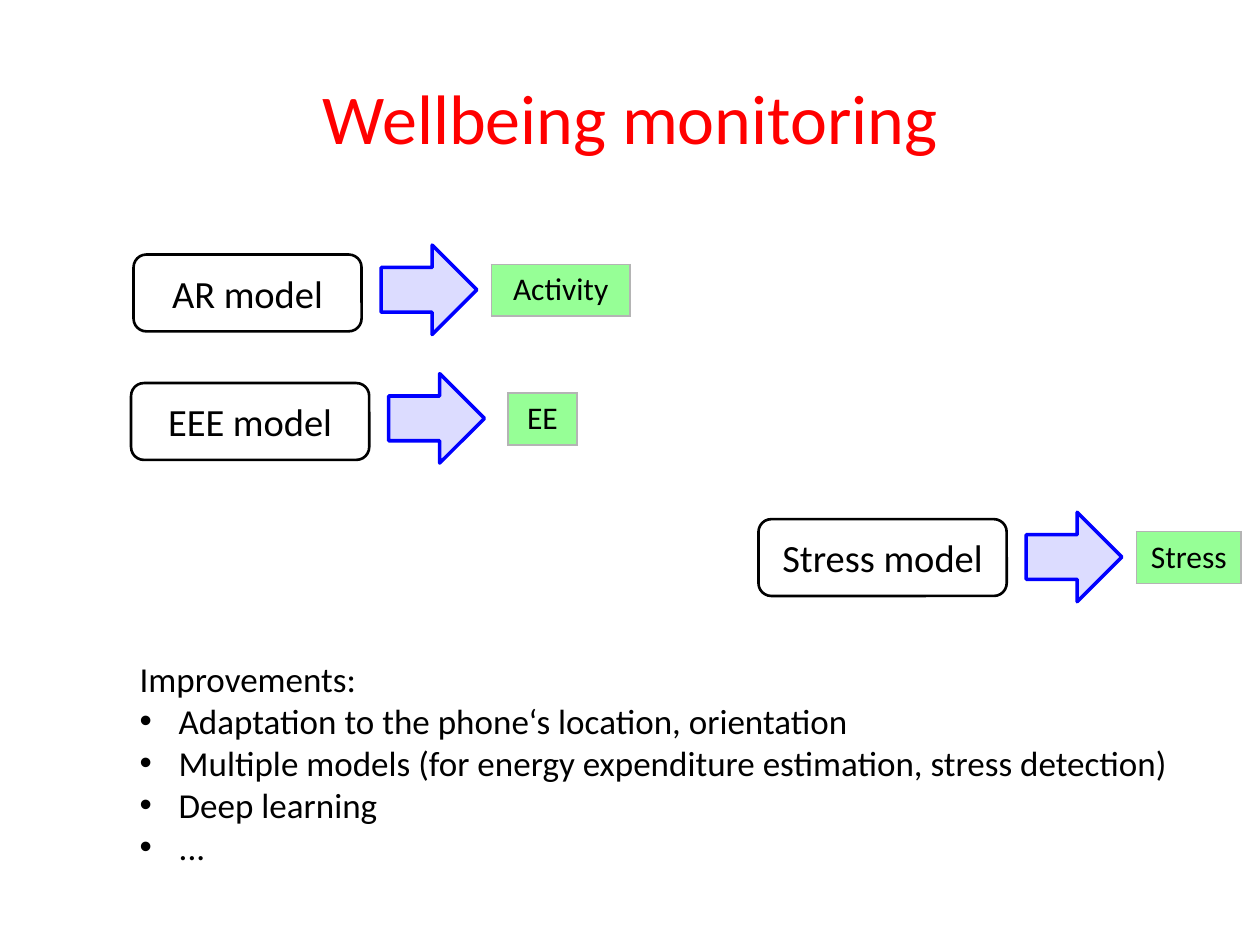
"""Build the wellbeing monitoring slide: three models, their outputs and a list of improvements."""
from dataclasses import dataclass

import pptx
import pptx.dml.color
import pptx.enum.shapes
import pptx.enum.text
import pptx.oxml
import pptx.oxml.ns
import pptx.util

TITLE = "Wellbeing monitoring"
MODELS = [
    {"model": "AR model", "output": "Activity", "left": 1.06, "top": 2.02, "width": 1.81,
     "output_gap": 0.14, "output_width": 1.1, "drop": 0, "grouped": False},
    {"model": "EEE model", "output": "EE", "left": 1.04, "top": 3.04, "width": 1.89,
     "output_gap": 0.21, "output_width": 0.55, "drop": 0, "grouped": False},
    {"model": "Stress model", "output": "Stress", "left": 6.02, "top": 4.12, "width": 1.97,
     "output_gap": 0.14, "output_width": 0.83, "drop": 0.02, "grouped": True},
]
IMPROVEMENTS_HEADING = "Improvements:"
IMPROVEMENTS = [
    "Adaptation to the phone‘s location, orientation",
    "Multiple models (for energy expenditure estimation, stress detection)",
    "Deep learning",
    "...",
]

COLUMNS, ROWS = 10, 7.5
BOX_HEIGHT = 0.61
ARROW_GAP, ARROW_RISE, ARROW_WIDTH, ARROW_HEIGHT = 0.18, 0.1, 0.71, 0.76
OUTPUT_OFFSET, OUTPUT_HEIGHT = 0.08, 0.41
BULLET_INDENT = 0.31


@dataclass(frozen=True)
class Theme:
    font: str = "Calibri"
    title: str = "FF0000"
    text: str = "000000"
    arrow_fill: str = "DCDCFF"
    arrow_line: str = "0000FF"
    output_fill: str = "96FF96"
    output_border: str = "B4B4B4"
    title_size: int = 40
    model_size: int = 22
    list_size: int = 20
    output_size: int = 18


THEME = Theme()
CENTER = pptx.enum.text.PP_ALIGN.CENTER
MIDDLE = pptx.enum.text.MSO_ANCHOR.MIDDLE
SHAPES = pptx.enum.shapes.MSO_SHAPE


def rgb(value):
    return pptx.dml.color.RGBColor.from_string(value)


def place(*cells):
    return [pptx.util.Inches(cell) for cell in cells]


def write(paragraph, text, size, color=THEME.text, alignment=None):
    paragraph.alignment = alignment
    run = paragraph.add_run()
    run.text = text
    run.font.name = THEME.font
    run.font.size = pptx.util.Pt(size)
    run.font.color.rgb = rgb(color)


def add_outlined(shapes, kind, frame, line, line_width, fill=None):
    shape = shapes.add_shape(kind, *place(*frame))
    shape.shadow.inherit = False
    if fill:
        shape.fill.solid()
        shape.fill.fore_color.rgb = rgb(fill)
    else:
        shape.fill.background()
    shape.line.color.rgb = rgb(line)
    shape.line.width = pptx.util.Pt(line_width)
    return shape


def add_output(slide, text, frame):
    table = slide.shapes.add_table(1, 1, *place(*frame)).table
    table.first_row = table.horz_banding = False
    cell = table.cell(0, 0)
    write(cell.text_frame.paragraphs[0], text, THEME.output_size, alignment=CENTER)
    properties = cell._tc.get_or_add_tcPr()
    for side in ("lnL", "lnR", "lnT", "lnB"):
        properties.append(pptx.oxml.parse_xml(
            f'<a:{side} {pptx.oxml.ns.nsdecls("a")} w="12700"><a:solidFill>'
            f'<a:srgbClr val="{THEME.output_border}"/></a:solidFill></a:{side}>'))
    cell.fill.solid()
    cell.fill.fore_color.rgb = rgb(THEME.output_fill)


def add_model(slide, entry):
    left, top, width, drop = (entry[key] for key in ("left", "top", "width", "drop"))
    arrow_left = left + width + ARROW_GAP
    output_left = arrow_left + ARROW_WIDTH + entry["output_gap"]
    add_output(slide, entry["output"],
               (output_left, top + OUTPUT_OFFSET + drop, entry["output_width"], OUTPUT_HEIGHT))

    shapes = slide.shapes.add_group_shape().shapes if entry["grouped"] else slide.shapes
    box = add_outlined(shapes, SHAPES.ROUNDED_RECTANGLE, (left, top, width, BOX_HEIGHT),
                       THEME.text, 1.5)
    box.text_frame.vertical_anchor = MIDDLE
    write(box.text_frame.paragraphs[0], entry["model"], THEME.model_size, alignment=CENTER)
    arrow = add_outlined(shapes, SHAPES.DOWN_ARROW,
                         (arrow_left, top - ARROW_RISE + drop, ARROW_WIDTH, ARROW_HEIGHT),
                         THEME.arrow_line, 2, THEME.arrow_fill)
    arrow.rotation = 270


def add_title(slide):
    title = slide.shapes.title
    title.left, title.top, title.width, title.height = place(0.5, 0.3, COLUMNS - 1, 1.25)
    title.text_frame.vertical_anchor = MIDDLE
    write(title.text_frame.paragraphs[0], TITLE, THEME.title_size, THEME.title, CENTER)


def add_improvements(slide):
    frame = slide.shapes.add_textbox(*place(1.01, 5.17, 8.45, 1.78)).text_frame
    frame.word_wrap = False
    frame.auto_size = pptx.enum.text.MSO_AUTO_SIZE.SHAPE_TO_FIT_TEXT
    write(frame.paragraphs[0], IMPROVEMENTS_HEADING, THEME.list_size)
    indent = pptx.util.Inches(BULLET_INDENT)
    for text in IMPROVEMENTS:
        paragraph = frame.add_paragraph()
        write(paragraph, text, THEME.list_size)
        properties = paragraph._p.get_or_add_pPr()
        properties.set("marL", str(indent))
        properties.set("indent", str(-indent))
        for bullet in ('buFont typeface="Arial"', 'buChar char="•"'):
            name, attribute = bullet.split()
            properties.append(pptx.oxml.parse_xml(
                f'<a:{name} {pptx.oxml.ns.nsdecls("a")} {attribute}/>'))


def main():
    presentation = pptx.Presentation()
    presentation.slide_width, presentation.slide_height = place(COLUMNS, ROWS)
    slide = presentation.slides.add_slide(presentation.slide_layouts.get_by_name("Title Only"))
    add_title(slide)
    for entry in MODELS:
        add_model(slide, entry)
    add_improvements(slide)
    presentation.save("out.pptx")


if __name__ == "__main__":
    main()
